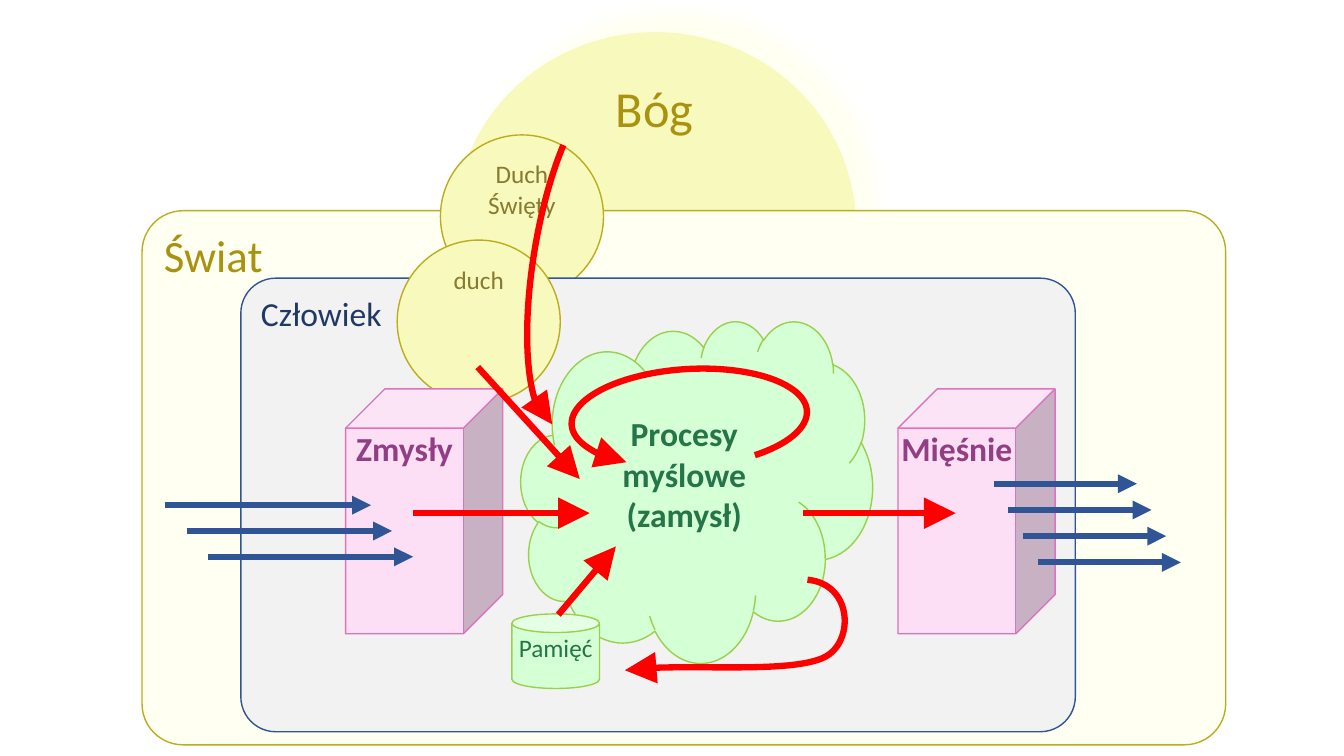
from lxml import etree
from pptx import Presentation
from pptx import util as u
from pptx.dml.color import RGBColor
from pptx.enum import shapes, text
from pptx.oxml.ns import qn

Cm, Pt = u.Cm, u.Pt
KIND = shapes.MSO_SHAPE
RED, BLUE = "FF0000", "2F5597"
GOLD = {"fill": "F8F9BC", "line": "BBAD1D"}
PINK = {"fill": "FCDEF5", "line": "DD73BC"}
GREEN = {"fill": "D5FFD4", "line": "99D14D"}
HEAD_SIZE = {RED: "lg", BLUE: "med"}
ARROW_WIDTH = 4.5


def colour(value):
    return RGBColor.from_string(value)


def write(shape, lines, size, ink, bold=False, align="CENTER", **frame_format):
    """Fill the shape's text frame, one paragraph for each line."""
    frame = shape.text_frame
    settings = {"word_wrap": True, "vertical_anchor": text.MSO_ANCHOR.TOP}
    for name, value in {**settings, **frame_format}.items():
        setattr(frame, name, value)
    for number, line in enumerate(lines):
        para = frame.add_paragraph() if number else frame.paragraphs[0]
        para.alignment = getattr(text.PP_ALIGN, align)
        span = para.add_run()
        span.text = line
        for name, value in {"name": "Calibri", "size": Pt(size), "bold": bold}.items():
            setattr(span.font, name, value)
        span.font.color.rgb = colour(ink)


def margins(side, top=None):
    top = side if top is None else top
    return {"margin_left": Cm(side), "margin_right": Cm(side),
            "margin_top": Cm(top), "margin_bottom": Cm(side)}


def add_body(page, kind, place, fill, line=None):
    body = page.shapes.add_shape(kind, *map(Cm, place))
    body.shadow.inherit = False
    body.fill.solid()
    body.fill.fore_color.rgb = colour(fill)
    if line:
        body.line.color.rgb = colour(line)
        body.line.width = Pt(1)
    else:
        body.line.fill.background()
    return body


def add_region(page, place, fill, line, label, size, ink):
    region = add_body(page, KIND.ROUNDED_RECTANGLE, place, fill, line)
    region.adjustments[0] = 0.077
    write(region, [label], size, ink, align="LEFT")


def add_glow(shape, tint):
    effects = shape.element.spPr.find(qn("a:effectLst"))
    shadow = etree.SubElement(effects, qn("a:outerShdw"), blurRad=str(Pt(10)),
                              dist=str(Pt(20)), dir=str(315 * 60000),
                              algn="bl", rotWithShape="0")
    etree.SubElement(shadow, qn("a:srgbClr"), val=tint)


def style_arrow(arrow, ink):
    arrow.line.color.rgb = colour(ink)
    arrow.line.width = Pt(ARROW_WIDTH)
    outline = arrow.element.spPr.find(qn("a:ln"))
    etree.SubElement(outline, qn("a:tailEnd"), type="triangle",
                     w=HEAD_SIZE[ink], len=HEAD_SIZE[ink])


def add_arrow(parent, start, end, ink):
    arrow = parent.shapes.add_connector(
        shapes.MSO_CONNECTOR.STRAIGHT, *map(Cm, (*start, *end)))
    style_arrow(arrow, ink)
    etree.SubElement(arrow.element.spPr, qn("a:effectLst"))


def add_arrow_group(page, count, start, step, length):
    group = page.shapes.add_group_shape()
    for number in range(count):
        x, y = (first + number * gap for first, gap in zip(start, step))
        add_arrow(group, (x, y), (x + length, y), BLUE)


def add_arc_arrow(page, place, rotation, angles):
    """Draw an arc between two angles in degrees, flipped and then rotated."""
    arc = page.shapes.add_shape(KIND.ARC, *map(Cm, place))
    arc.shadow.inherit = False
    arc.fill.background()
    for number, angle in enumerate(angles):
        arc.adjustments[number] = angle * 0.6  # 60000 units a degree, over 100000
    arc.rotation = rotation
    arc.element.spPr.find(qn("a:xfrm")).set("flipV", "1")
    style_arrow(arc, RED)


def add_curved_arrow(page, points, width):
    """Draw Bézier pieces: a start, then three points for each piece."""
    start, *rest = [tuple(map(Cm, point)) for point in points]
    builder = page.shapes.build_freeform(*start)
    builder.add_line_segments(rest, close=False)
    curve = builder.convert_to_shape()
    route = next(curve.element.iter(qn("a:path")))
    pieces = route.findall(qn("a:lnTo"))
    for first in range(0, len(pieces), 3):
        bend = etree.SubElement(route, qn("a:cubicBezTo"))
        for piece in pieces[first:first + 3]:
            bend.append(piece[0])
            route.remove(piece)
    curve.width = Cm(width)
    route.set("w", str(Cm(width)))
    curve.shadow.inherit = False
    curve.fill.background()
    style_arrow(curve, RED)


def add_spirit(page, left, top, label):
    spirit = add_body(page, KIND.OVAL, (left, top, 4.11, 4.11), **GOLD)
    write(spirit, [label], 18, "877B31", **margins(0))


def add_block(page, left, label):
    block = add_body(page, KIND.CUBE, (left, 9.8, 3.96, 6.17), **PINK)
    write(block, [label], 24, "923E83", bold=True, **margins(0))


def main():
    deck = Presentation()
    deck.slide_width, deck.slide_height = Cm(33.87), Cm(19.05)
    page = deck.slides.add_slide(deck.slide_layouts[6])

    god = add_body(page, KIND.OVAL, (11.46, 0.81, 10.11, 9.78), GOLD["fill"])
    add_glow(god, "FFFFF2")
    add_region(page, (3.58, 5.31, 27.31, 13.46), "FFFFF2", GOLD["line"],
               "Świat", 32, "A9920F")
    add_spirit(page, 11.1, 3.4, "Duch Święty")
    add_region(page, (6.07, 7.01, 21.03, 11.43), "F2F2F2", BLUE,
               "Człowiek", 24, "203864")
    add_block(page, 22.63, "Mięśnie")
    add_spirit(page, 10.01, 6.05, "duch")

    mind = add_body(page, KIND.CLOUD, (13.13, 8.08, 8.86, 8.61), **GREEN)
    write(mind, ["Procesy myślowe", "(zamysł)"], 24, "257549", bold=True,
          **margins(0, top=1.03))
    add_block(page, 8.71, "Zmysły")

    add_arrow_group(page, 4, (25.04, 12.19), (0.37, 0.66), 3.61)
    add_arrow_group(page, 3, (4.17, 12.73), (0.53, 0.65), 5.18)

    memory = add_body(page, KIND.CAN, (12.9, 15.47, 2.21, 1.88), **GREEN)
    write(memory, ["Pamięć"], 18, "257549", **margins(0))

    add_arrow(page, (20.24, 12.93), (24.08, 12.93), RED)
    add_arrow(page, (10.41, 12.93), (14.86, 12.93), RED)
    add_curved_arrow(page, [(20.35, 14.61),
                            (21.49, 14.71), (21.54, 16.18), (20.78, 16.56),
                            (20.02, 16.94), (16.92, 16.71), (15.75, 16.89)], 5.51)
    add_arrow(page, (14.07, 15.49), (15.52, 13.77), RED)
    add_arc_arrow(page, (14.4, 9.3, 5.94, 2.46), 176.6, (146.93, 31.78))

    title = page.shapes.add_textbox(*map(Cm, (12.93, 1.85, 7.14, 2.24)))
    write(title, ["Bóg"], 36, "A9920F", **margins(0.1),
          auto_size=text.MSO_AUTO_SIZE.SHAPE_TO_FIT_TEXT)
    add_arrow(page, (12.04, 9.25), (14.61, 12.07), RED)
    add_arc_arrow(page, (10.41, 5.26, 8.56, 2.46), 99.5, (199.33, 359.1))

    deck.save("out.pptx")


if __name__ == "__main__":
    main()
